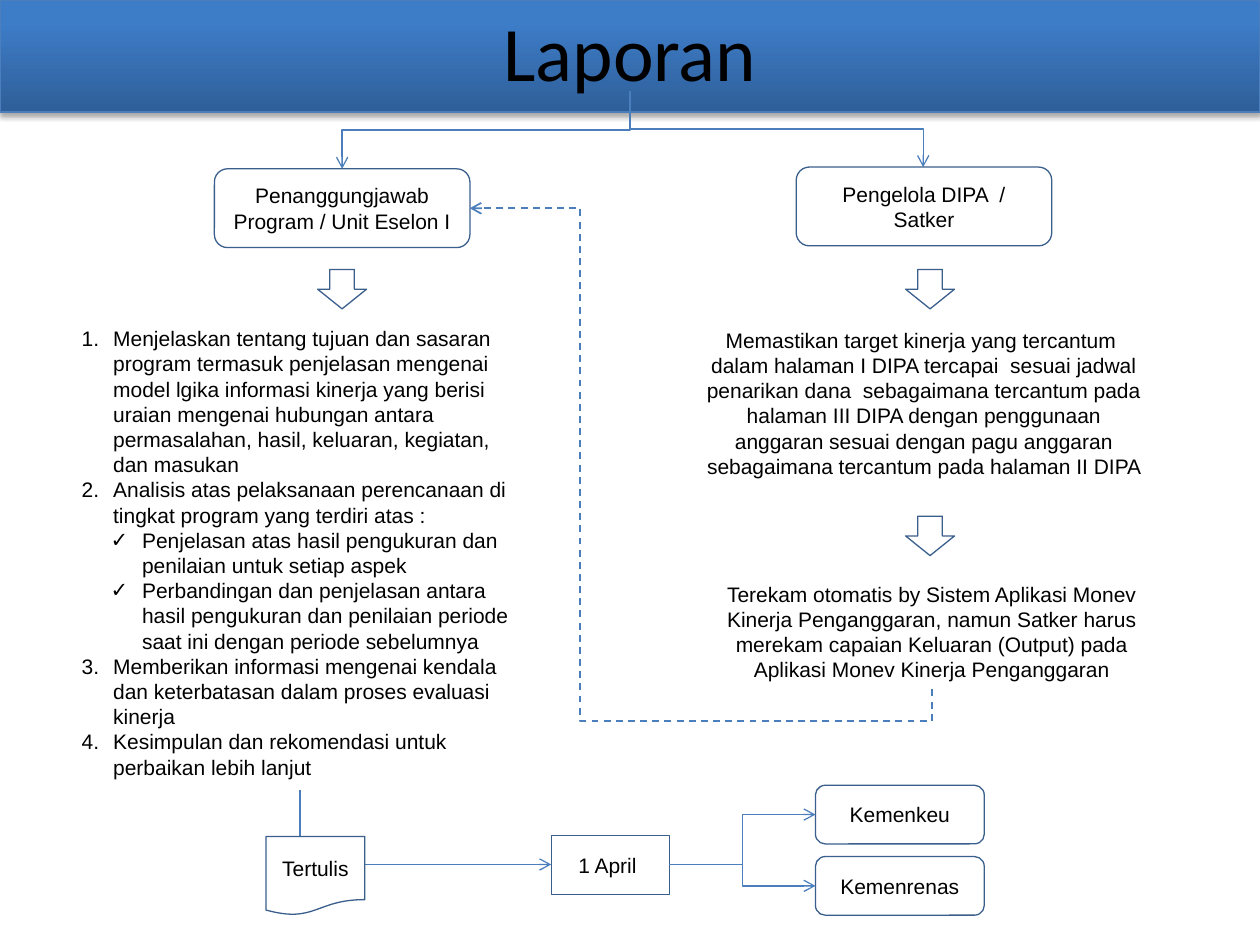
from dataclasses import dataclass

from lxml import etree
from pptx import Presentation
from pptx.dml.color import RGBColor
from pptx.enum.dml import MSO_LINE
from pptx.enum.shapes import MSO_CONNECTOR, MSO_SHAPE
from pptx.enum.text import MSO_ANCHOR, MSO_AUTO_SIZE, PP_ALIGN
from pptx.oxml.ns import qn
from pptx.util import Pt

RECT = MSO_SHAPE.RECTANGLE
ROUNDED = MSO_SHAPE.ROUNDED_RECTANGLE
DOCUMENT = MSO_SHAPE.FLOWCHART_DOCUMENT
DOWN_ARROW = MSO_SHAPE.DOWN_ARROW
ELBOW = MSO_CONNECTOR.ELBOW
DASH = MSO_LINE.DASH
CENTER, LEFT = PP_ALIGN.CENTER, PP_ALIGN.LEFT
MIDDLE, TOP = MSO_ANCHOR.MIDDLE, MSO_ANCHOR.TOP
NO_AUTOFIT = MSO_AUTO_SIZE.NONE


@dataclass(frozen=True)
class Theme:
    title_font: str = "Calibri"
    body_font: str = "Arial"
    title_size: int = 44
    body_size: int = 12
    ink: str = "000000"
    paper: str = "FFFFFF"
    outline: str = "3A5F8C"
    link: str = "4B7EBC"
    band_dark: str = "2F5F99"
    band_light: str = "3D7CC7"


def rgb(value):
    return RGBColor.from_string(value)


def add_xml(parent, tag, **attributes):
    child = etree.SubElement(parent, qn(tag))
    for key, value in attributes.items():
        child.set(key, str(value))
    return child


class FlowSlide:
    def __init__(self, slide, theme):
        self.slide, self.shapes, self.theme = slide, slide.shapes, theme

    def place(self, shape, box):
        shape.left, shape.top, shape.width, shape.height = map(Pt, box)

    def style(self, paragraph, align, font=None, size=None):
        paragraph.alignment = align
        paragraph.font.name = font or self.theme.body_font
        paragraph.font.size = Pt(size or self.theme.body_size)
        paragraph.font.color.rgb = rgb(self.theme.ink)

    def set_text(self, frame, text, anchor):
        frame.word_wrap = True
        frame.vertical_anchor = anchor
        frame.text = text
        self.style(frame.paragraphs[0], CENTER)

    def band(self, box):
        band = self.shapes.add_shape(RECT, *map(Pt, box))
        band.fill.gradient()
        band.fill.gradient_angle = 90
        dark, light = band.fill.gradient_stops
        dark.position, light.position = 0, 0.8
        dark.color.rgb = rgb(self.theme.band_dark)
        light.color.rgb = rgb(self.theme.band_light)
        band.line.color.rgb = rgb(self.theme.link)
        band.line.width = Pt(0.75)
        effects = add_xml(band._element.spPr, "a:effectLst")
        shadow = add_xml(effects, "a:outerShdw", blurRad=Pt(3.1), dist=Pt(1.8),
                         dir=90 * 60000, rotWithShape=0)
        add_xml(add_xml(shadow, "a:srgbClr", val=self.theme.ink), "a:alpha", val=35000)
        # The band lies behind the title
        self.shapes._spTree.insert(2, band._element)

    def title(self, text, box):
        title = self.shapes.title
        self.place(title, box)
        frame = title.text_frame
        frame.text = text
        frame.auto_size = NO_AUTOFIT
        frame.vertical_anchor = MIDDLE
        self.style(frame.paragraphs[0], CENTER, self.theme.title_font, self.theme.title_size)

    def numbered_list(self, items, box):
        body = self.slide.placeholders[1]
        self.place(body, box)
        frame = body.text_frame
        frame.auto_size = NO_AUTOFIT
        frame.vertical_anchor = TOP
        for index, (level, text) in enumerate(items):
            item = frame.paragraphs[0] if index == 0 else frame.add_paragraph()
            item.text = text
            item.level = level
            item.space_before = Pt(0)
            properties = item._p.get_or_add_pPr()
            properties.set("marL", str(Pt(34.5 if level else 18)))
            properties.set("indent", str(-Pt(18)))
            add_xml(properties, "a:buFont", typeface=self.theme.body_font)
            if level:
                add_xml(properties, "a:buChar", char="✓")
            else:
                add_xml(properties, "a:buAutoNum", type="arabicPeriod")
            self.style(item, LEFT)

    def node(self, kind, box, text="", fill=None):
        node = self.shapes.add_shape(kind, *map(Pt, box))
        node.shadow.inherit = False
        if fill:
            node.fill.solid()
            node.fill.fore_color.rgb = rgb(fill)
        else:
            node.fill.background()
        node.line.color.rgb = rgb(self.theme.outline)
        node.line.width = Pt(0.75)
        if text:
            self.set_text(node.text_frame, text, MIDDLE)

    def note(self, text, box):
        note = self.shapes.add_textbox(*map(Pt, box))
        self.set_text(note.text_frame, text, TOP)

    def link(self, start, end, upright=False, bends=3, adjust=(), dashed=False):
        """Elbow arrow; an upright one leaves its start vertically."""
        ends = (*start, *end)
        if upright:
            # Swap width and height about the centre, then turn the box
            dx, dy = end[0] - start[0], end[1] - start[1]
            x, y = (start[0] + end[0]) / 2, (start[1] + end[1]) / 2
            w, h = abs(dy) / 2, abs(dx) / 2
            ends = (x - w, y - h, x + w, y + h)
        link = self.shapes.add_connector(ELBOW, *map(Pt, ends))
        properties = link._element.spPr
        if upright:
            frame = properties.find(qn("a:xfrm"))
            frame.set("rot", str((90 if dx < 0 else 270) * 60000))
            if (dx < 0) == (dy < 0):
                frame.set("flipH", "1")
        geometry = properties.find(qn("a:prstGeom"))
        geometry.set("prst", f"bentConnector{bends}")
        for number, value in enumerate(adjust, 1):
            add_xml(geometry.find(qn("a:avLst")), "a:gd", name=f"adj{number}",
                    fmla=f"val {round(value * 1000)}")
        link.line.color.rgb = rgb(self.theme.link)
        link.line.width = Pt(1 if dashed else 0.75)
        if dashed:
            link.line.dash_style = DASH
        add_xml(properties.find(qn("a:ln")), "a:tailEnd", type="arrow")
        add_xml(properties, "a:effectLst")


def main():
    deck = Presentation()
    deck.slide_width, deck.slide_height = Pt(720), Pt(540)
    theme = Theme()
    page = FlowSlide(deck.slides.add_slide(deck.slide_layouts[1]), theme)

    # Heading
    page.band((0, 0, 720, 64))
    page.title("Laporan", (36, 6, 648, 46))

    # Links drawn behind the boxes
    page.link((171.5, 451.5), (315, 494), upright=True, bends=2)
    for target in ((195.5, 96.5), (527.5, 95.5)):
        page.link((360, 52), target, upright=True)

    # Two reporting parties
    page.node(ROUNDED, (122.5, 96.5, 146, 45), "Penanggungjawab Program / Unit Eselon I")
    page.node(ROUNDED, (455, 95.5, 146, 45), "Pengelola DIPA  / Satker")
    for left, top in ((181.5, 154), (517.5, 154), (517.5, 295)):
        page.node(DOWN_ARROW, (left, top, 28, 22.5))

    # Duties of the programme owner
    page.numbered_list([
        (0, "Menjelaskan tentang tujuan dan sasaran program termasuk penjelasan mengenai model lgika informasi kinerja yang berisi uraian mengenai hubungan antara permasalahan, hasil, keluaran, kegiatan, dan masukan"),
        (0, "Analisis atas pelaksanaan perencanaan di tingkat program yang terdiri atas :"),
        (1, "Penjelasan atas hasil pengukuran dan penilaian untuk setiap aspek"),
        (1, "Perbandingan dan penjelasan antara hasil pengukuran dan penilaian periode saat ini dengan periode sebelumnya"),
        (0, "Memberikan informasi mengenai kendala dan keterbatasan dalam proses evaluasi kinerja"),
        (0, "Kesimpulan dan rekomendasi untuk perbaikan lebih lanjut"),
    ], (39.5, 182.5, 264, 269))

    # Duties of the budget unit, fed back to the programme owner
    page.note("Memastikan target kinerja yang tercantum  dalam halaman I DIPA tercapai  sesuai jadwal penarikan dana  sebagaimana tercantum pada halaman III DIPA dengan penggunaan anggaran sesuai dengan pagu anggaran sebagaimana tercantum pada halaman II DIPA ",
              (396, 183.5, 264, 94.5))
    page.note("Terekam otomatis by Sistem Aplikasi Monev Kinerja Penganggaran, namun Satker harus merekam capaian Keluaran (Output) pada Aplikasi Monev Kinerja Penganggaran",
              (394.5, 328.5, 276, 65.5))
    page.link((532.5, 394), (268.5, 119), upright=True, bends=4,
              adjust=(-6.5, 76.1), dashed=True)

    # Submission of the written report
    page.node(DOCUMENT, (152, 478, 56.5, 45), "Tertulis", theme.paper)
    page.node(RECT, (315, 477.5, 67.5, 33.5), "1 April ")
    for ministry, top in (("Kemenkeu", 448.75), ("Kemenrenas", 489.5)):
        page.node(ROUNDED, (466, top, 96.5, 33.5), ministry)
        page.link((382.5, 494), (466, top + 16.75))

    deck.save("out.pptx")


if __name__ == "__main__":
    main()
